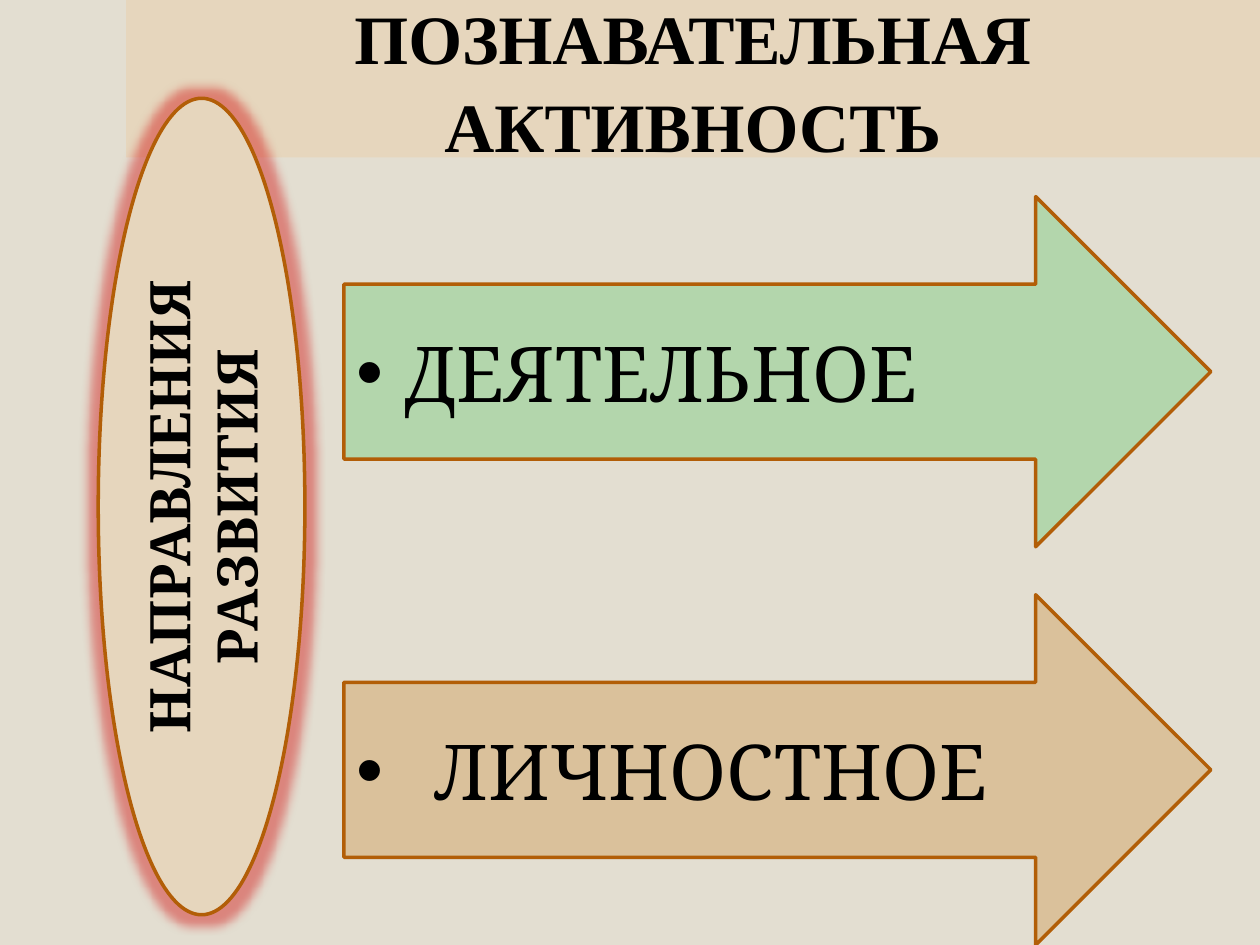
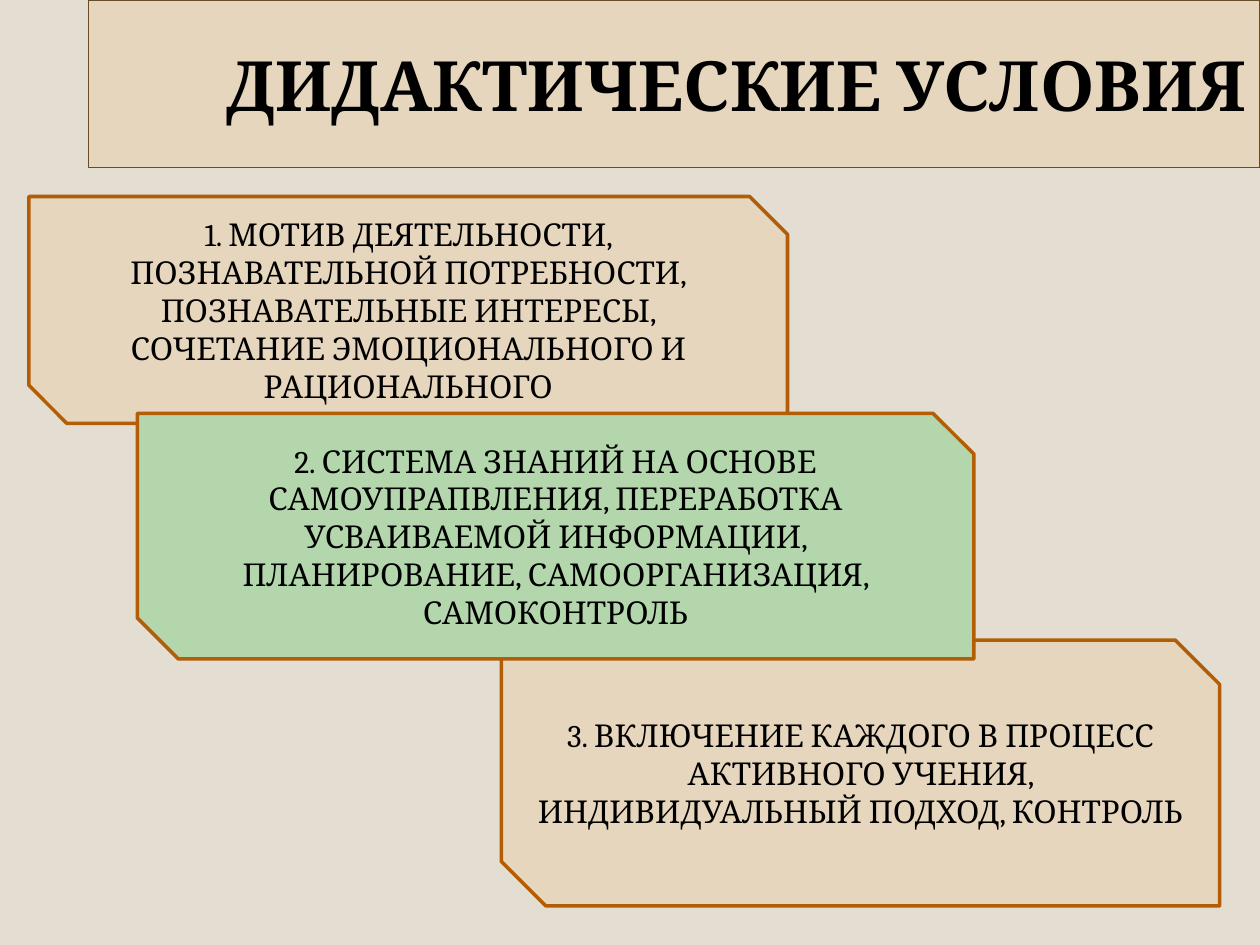
from dataclasses import dataclass

from lxml import etree
from pptx import Presentation
from pptx.dml.color import RGBColor
from pptx.enum.shapes import MSO_SHAPE
from pptx.enum.text import MSO_ANCHOR, MSO_AUTO_SIZE, PP_ALIGN
from pptx.oxml.ns import qn
from pptx.util import Inches, Pt

ARROW = MSO_SHAPE.RIGHT_ARROW
OVAL = MSO_SHAPE.OVAL
SNIP = MSO_SHAPE.SNIP_2_DIAG_RECTANGLE
MIDDLE = MSO_ANCHOR.MIDDLE
FIXED = MSO_AUTO_SIZE.NONE
LEFT, CENTER, RIGHT = PP_ALIGN.LEFT, PP_ALIGN.CENTER, PP_ALIGN.RIGHT
TITLE_ONLY = 5


@dataclass(frozen=True)
class Theme:
    back: str = "E3DED1"
    sand: str = "E6D6BD"
    green: str = "B3D6AC"
    tan: str = "DAC19B"
    rust: str = "B25E07"
    brown: str = "674D26"
    glow: str = "D00000"
    ink: str = "000000"
    serif: str = "Cambria"
    roman: str = "Times New Roman"
    head: float = 39.6
    label: float = 32
    large: float = 44
    body: float = 18


def color(code):
    return RGBColor.from_string(code)


def write(shape, text, *, size, font, ink, bold=False, align=CENTER, space=None):
    frame = shape.text_frame
    frame.word_wrap = True
    frame.auto_size = FIXED
    frame.vertical_anchor = MIDDLE
    para = frame.paragraphs[0]
    para.alignment = align
    para.line_spacing = space
    run = para.add_run()
    run.text = text
    run.font.size = Pt(size)
    run.font.name = font
    run.font.bold = bold
    run.font.color.rgb = color(ink)
    return para


class Deck:
    def __init__(self, theme):
        self.theme = theme
        self.show = Presentation()
        self.show.slide_width = Inches(10)
        self.show.slide_height = Inches(7.5)
        fill = self.show.slide_master.background.fill
        fill.solid()
        fill.fore_color.rgb = color(theme.back)
        self.slide = None

    def paint(self, shape, fill, line=None, width=2):
        shape.fill.solid()
        shape.fill.fore_color.rgb = color(fill)
        if line:
            shape.line.color.rgb = color(line)
            shape.line.width = Pt(width)
        else:
            shape.line.fill.background()

    def page(self, text, box, *, font, align, line=None, space=None):
        look = self.theme
        self.slide = self.show.slides.add_slide(self.show.slide_layouts[TITLE_ONLY])
        title = self.slide.shapes.title
        title.left, title.top, title.width, title.height = map(Inches, box)
        self.paint(title, look.sand, line, 0.75)
        write(title, text, size=look.head, font=font, ink=look.ink,
              bold=True, align=align, space=space)

    def block(self, kind, text, box, fill, size, **style):
        look = self.theme
        shape = self.slide.shapes.add_shape(kind, *map(Inches, box))
        shape.shadow.inherit = False
        self.paint(shape, fill, look.rust)
        para = write(shape, text, size=size, font=look.serif, ink=look.ink, **style)
        return shape, para

    def arrow(self, text, top, fill, indent):
        box = (2.73, top, 6.88, 2.78)
        para = self.block(ARROW, text, box, fill, self.theme.large, align=LEFT)[1]
        props = para._p.get_or_add_pPr()
        props.set("marL", str(Inches(indent)))
        props.set("indent", str(-Inches(indent)))
        etree.SubElement(props, qn("a:buFont"), typeface="Arial")
        etree.SubElement(props, qn("a:buChar"), char="•")

    def oval(self, text, box):
        look = self.theme
        shape = self.block(OVAL, text, box, look.sand, look.label, bold=True)[0]
        shape.rotation = 270
        effects = shape._element.spPr.find(qn("a:effectLst"))
        glow = etree.SubElement(effects, qn("a:glow"), rad=str(Inches(0.15)))
        tint = etree.SubElement(glow, qn("a:srgbClr"), val=look.glow)
        etree.SubElement(tint, qn("a:alpha"), val="40000")

    def card(self, text, box, fill):
        self.block(SNIP, text, box, fill, self.theme.body)


def main():
    look = Theme()
    deck = Deck(look)

    deck.page("ПОЗНАВАТЕЛЬНАЯ АКТИВНОСТЬ", (1, 0, 9, 1.25),
              font=look.roman, align=CENTER, space=1.05)
    deck.arrow("ДЕЯТЕЛЬНОЕ", 1.56, look.green, 0.38)
    deck.oval("НАПРАВЛЕНИЯ РАЗВИТИЯ", (-1.64, 3.2, 6.48, 1.64))
    deck.arrow("ЛИЧНОСТНОЕ", 4.72, look.tan, 0.62)

    deck.page("ДИДАКТИЧЕСКИЕ УСЛОВИЯ", (0.7, 0, 9.3, 1.33),
              font=look.serif, align=RIGHT, line=look.brown)
    cards = (
        ("1. МОТИВ ДЕЯТЕЛЬНОСТИ, ПОЗНАВАТЕЛЬНОЙ ПОТРЕБНОСТИ, "
         "ПОЗНАВАТЕЛЬНЫЕ ИНТЕРЕСЫ, СОЧЕТАНИЕ ЭМОЦИОНАЛЬНОГО И РАЦИОНАЛЬНОГО",
         (0.23, 1.56, 6.02, 1.8), look.sand),
        ("3. ВКЛЮЧЕНИЕ КАЖДОГО В ПРОЦЕСС АКТИВНОГО УЧЕНИЯ, "
         "ИНДИВИДУАЛЬНЫЙ ПОДХОД, КОНТРОЛЬ",
         (3.98, 5.08, 5.7, 2.11), look.sand),
        ("2. СИСТЕМА ЗНАНИЙ НА ОСНОВЕ САМОУПРАПВЛЕНИЯ, ПЕРЕРАБОТКА "
         "УСВАИВАЕМОЙ ИНФОРМАЦИИ, ПЛАНИРОВАНИЕ, САМООРГАНИЗАЦИЯ, САМОКОНТРОЛЬ",
         (1.09, 3.28, 6.64, 1.95), look.green),
    )
    for text, box, fill in cards:
        deck.card(text, box, fill)

    deck.show.save("out.pptx")


if __name__ == "__main__":
    main()
